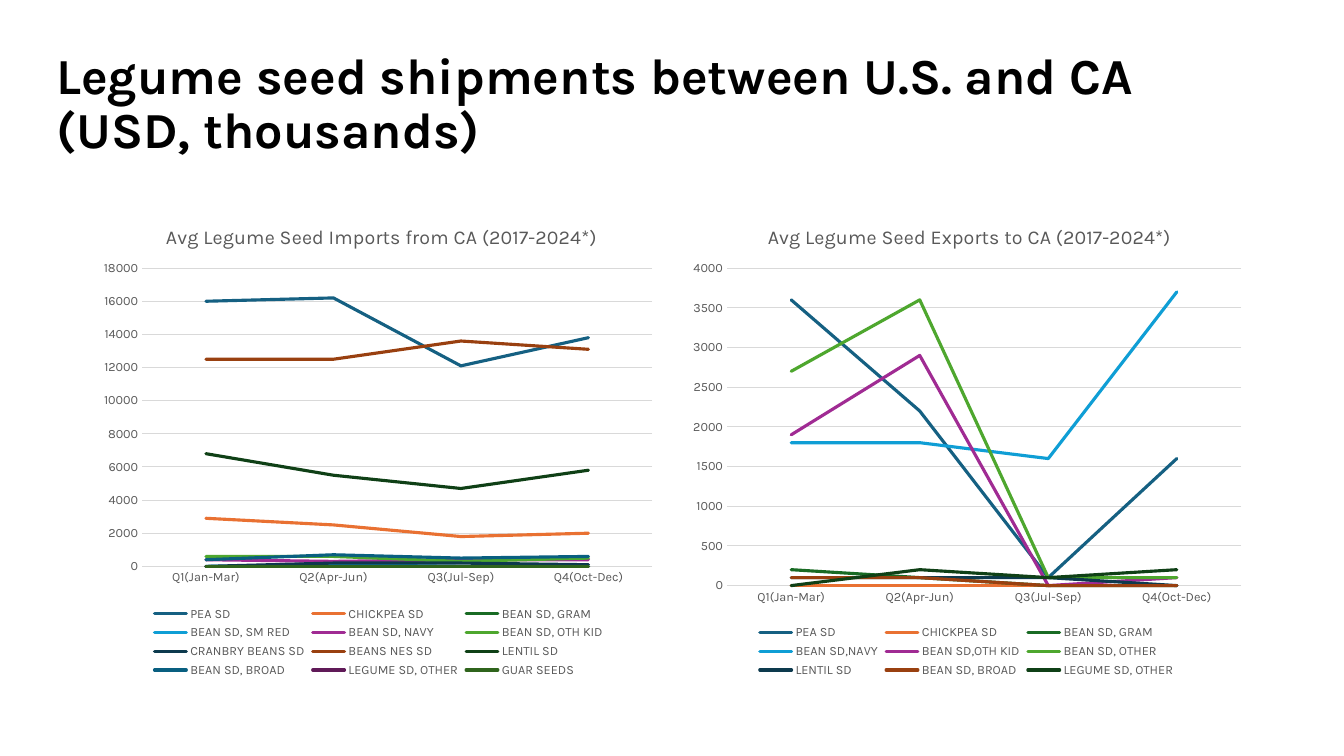
from dataclasses import dataclass

from lxml import etree
from pptx import Presentation
from pptx.chart.chart import Chart
from pptx.chart.data import CategoryChartData
from pptx.dml.color import RGBColor
from pptx.enum.chart import XL_CHART_TYPE, XL_LEGEND_POSITION, XL_MARKER_STYLE, XL_TICK_MARK
from pptx.enum.text import MSO_ANCHOR
from pptx.oxml.ns import qn
from pptx.slide import Slide
from pptx.text.text import Font
from pptx.util import Emu, Pt

LINE_CHART = XL_CHART_TYPE.LINE
LEGEND_BOTTOM = XL_LEGEND_POSITION.BOTTOM
NO_MARKER = XL_MARKER_STYLE.NONE
NO_TICK = XL_TICK_MARK.NONE
MIDDLE = MSO_ANCHOR.MIDDLE

EMU_PER_PX = 9144
FONT_NAME = "Karla"
BLACK = "000000"
GRAY = "595959"
GRID_GRAY = "D9D9D9"
SERIES_COLORS = (
    "156082", "E97132", "196B24", "0F9ED5", "A02B93", "4EA72E",
    "0D3A4E", "994010", "0F4016", "095F80", "601A58", "2F641C",
)
QUARTERS = ("Q1(Jan-Mar)", "Q2(Apr-Jun)", "Q3(Jul-Sep)", "Q4(Oct-Dec)")
HEADING = ("Legume seed shipments between U.S. and CA", "(USD, thousands)")
CHART_TOP, CHART_WIDTH, CHART_HEIGHT = 200, 567, 476
PLOT_TOP, TITLE_TOP = 66, 19


@dataclass(frozen=True)
class Shipments:
    title: str
    left: int
    title_left: int
    plot_left: int
    plot_width: int
    plot_height: int
    maximum: int
    step: int
    series: dict[str, tuple[int, ...]]


EXPORTS = Shipments(
    "Avg Legume Seed Exports to CA (2017-2024*)", 675, 83, 46, 510, 315, 4000, 500,
    {
        "PEA SD": (3600, 2200, 100, 1600),
        "CHICKPEA SD": (0, 0, 0, 0),
        "BEAN SD, GRAM": (200, 100, 0, 0),
        "BEAN SD,NAVY": (1800, 1800, 1600, 3700),
        "BEAN SD,OTH KID": (1900, 2900, 0, 100),
        "BEAN SD, OTHER": (2700, 3600, 100, 100),
        "LENTIL SD": (100, 100, 100, 0),
        "BEAN SD, BROAD": (100, 100, 0, 0),
        "LEGUME SD, OTHER": (0, 200, 100, 200),
    },
)
IMPORTS = Shipments(
    "Avg Legume Seed Imports from CA (2017-2024*)", 92, 69, 49, 506, 296, 18000, 2000,
    {
        "PEA SD": (16000, 16200, 12100, 13800),
        "CHICKPEA SD": (2900, 2500, 1800, 2000),
        "BEAN SD, GRAM": (0, 0, 0, 0),
        "BEAN SD, SM RED": (0, 100, 0, 0),
        "BEAN SD, NAVY": (400, 300, 400, 400),
        "BEAN SD, OTH KID": (600, 600, 300, 500),
        "CRANBRY BEANS SD": (0, 200, 200, 100),
        "BEANS NES SD": (12500, 12500, 13600, 13100),
        "LENTIL SD": (6800, 5500, 4700, 5800),
        "BEAN SD, BROAD": (400, 700, 500, 600),
        "LEGUME SD, OTHER": (0, 0, 0, 0),
        "GUAR SEEDS": (0, 0, 0, 0),
    },
)


def px(length: int) -> Emu:
    return Emu(length * EMU_PER_PX)


def color(value: str) -> RGBColor:
    return RGBColor.from_string(value)


def style_font(font: Font, size: int, value: str, bold: bool = False) -> None:
    font.name = FONT_NAME
    font.size = Pt(size)
    font.bold = bold
    font.color.rgb = color(value)


def manual_layout(target: str, **fractions: float) -> etree._Element:
    layout = etree.Element(qn("c:layout"))
    manual = etree.SubElement(layout, qn("c:manualLayout"))
    if target:
        etree.SubElement(manual, qn("c:layoutTarget"), val=target)
    for name in ("xMode", "yMode"):
        etree.SubElement(manual, qn(f"c:{name}"), val="edge")
    for name, fraction in fractions.items():
        etree.SubElement(manual, qn(f"c:{name}"), val=f"{fraction:.4f}")
    return layout


def replace_layout(parent: etree._Element, layout: etree._Element, index: int) -> None:
    for old in parent.findall(qn("c:layout")):
        parent.remove(old)
    parent.insert(index, layout)


def place_parts(chart: Chart, shipments: Shipments) -> None:
    title_layout = manual_layout(
        "", x=shipments.title_left / CHART_WIDTH, y=TITLE_TOP / CHART_HEIGHT
    )
    plot_layout = manual_layout(
        "inner",
        x=shipments.plot_left / CHART_WIDTH,
        y=PLOT_TOP / CHART_HEIGHT,
        w=shipments.plot_width / CHART_WIDTH,
        h=shipments.plot_height / CHART_HEIGHT,
    )
    root = chart.element
    replace_layout(root.find(f".//{qn('c:title')}"), title_layout, 1)
    replace_layout(root.find(f".//{qn('c:plotArea')}"), plot_layout, 0)


def style_axes(chart: Chart, shipments: Shipments) -> None:
    for axis in (chart.category_axis, chart.value_axis):
        axis.major_tick_mark = axis.minor_tick_mark = NO_TICK
        style_font(axis.tick_labels.font, 9, GRAY)
    values = chart.value_axis
    values.minimum_scale, values.maximum_scale = 0, shipments.maximum
    values.major_unit = shipments.step
    values.format.line.fill.background()
    for line in (chart.category_axis.format.line, values.major_gridlines.format.line):
        line.color.rgb = color(GRID_GRAY)
        line.width = Pt(0.75)


def add_shipments(slide: Slide, shipments: Shipments) -> None:
    data = CategoryChartData(number_format="General")
    data.categories = QUARTERS
    for name, values in shipments.series.items():
        data.add_series(name, values)
    chart = slide.shapes.add_chart(
        LINE_CHART, px(shipments.left), px(CHART_TOP), px(CHART_WIDTH), px(CHART_HEIGHT), data
    ).chart
    style_font(chart.font, 10, BLACK)
    chart.has_title = True
    para = chart.chart_title.text_frame.paragraphs[0]
    para.text = shipments.title
    style_font(para.runs[0].font, 14, GRAY)
    chart.has_legend = True
    chart.legend.position = LEGEND_BOTTOM
    chart.legend.include_in_layout = False
    style_font(chart.legend.font, 9, GRAY)
    style_axes(chart, shipments)
    plot = chart.plots[0]
    plot.vary_by_categories = False
    for series, value in zip(plot.series, SERIES_COLORS):
        series.smooth = False
        series.marker.style = NO_MARKER
        series.format.line.color.rgb = color(value)
        series.format.line.width = Pt(2.25)
        series.format.line._get_or_add_ln().set("cap", "rnd")
    place_parts(chart, shipments)


def add_heading(slide: Slide) -> None:
    box = slide.shapes.add_textbox(px(46), px(32), px(1150), px(145))
    frame = box.text_frame
    frame.word_wrap = True
    frame.vertical_anchor = MIDDLE
    frame.text = "\n".join(HEADING)
    for para in frame.paragraphs:
        para.line_spacing = 0.9
        style_font(para.runs[0].font, 36, BLACK, bold=True)


def main() -> None:
    deck = Presentation()
    deck.slide_width, deck.slide_height = px(1333), px(750)
    page = deck.slides.add_slide(deck.slide_layouts[6])
    add_heading(page)
    for shipments in (EXPORTS, IMPORTS):
        add_shipments(page, shipments)
    deck.save("out.pptx")


if __name__ == "__main__":
    main()
